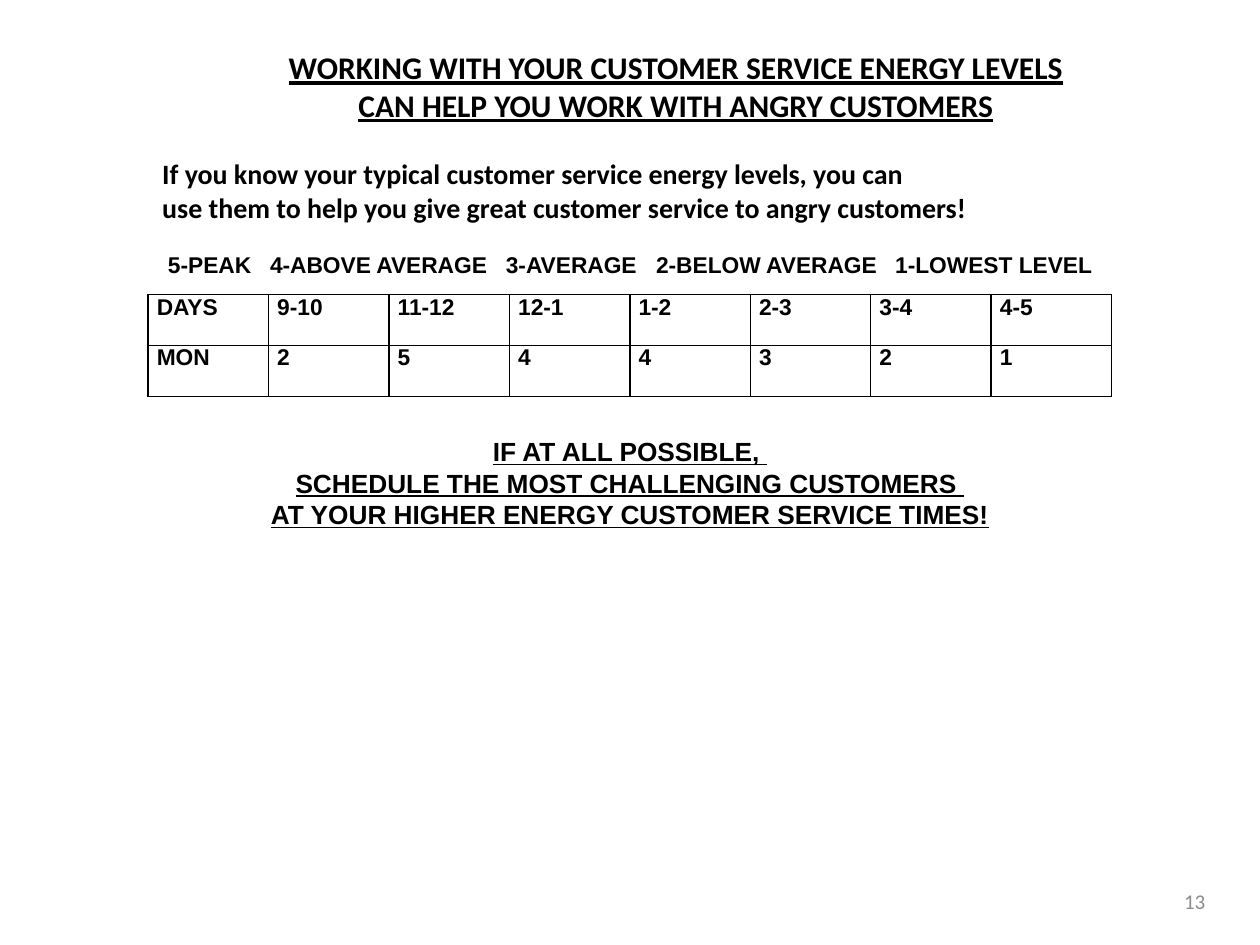
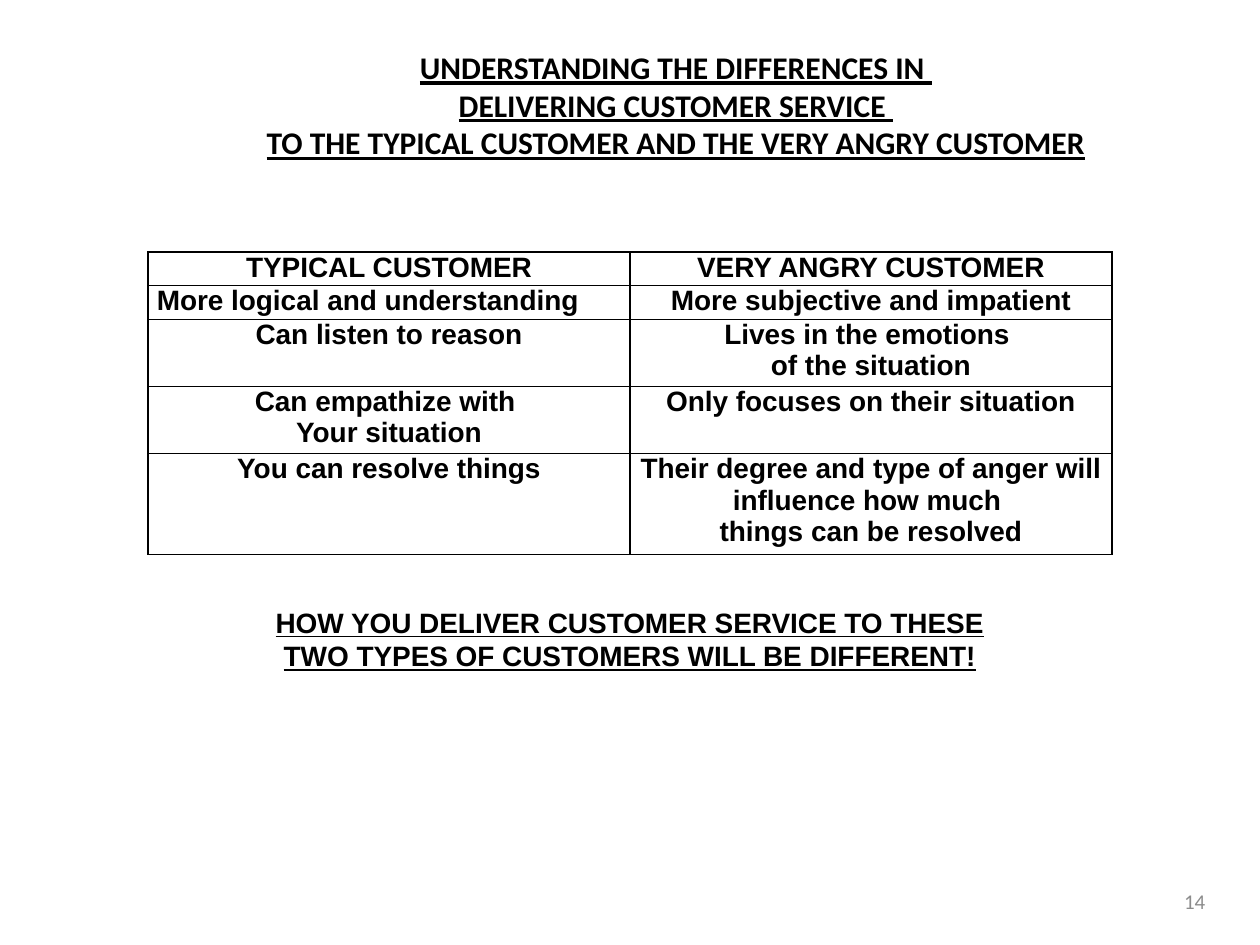
from dataclasses import dataclass
from typing import Optional

from lxml import etree
from pptx import Presentation
from pptx.dml import color
from pptx.enum import text as t
from pptx.oxml import ns
from pptx.util import Pt

COLORS = {"ink": "000000", "page_number": "8C8C8C"}
HEADING_FONT, DETAIL_FONT = "Calibri", "Arial"
LEFT, CENTER, RIGHT = t.PP_ALIGN.LEFT, t.PP_ALIGN.CENTER, t.PP_ALIGN.RIGHT
TITLE_AND_BODY, TITLE_ONLY = 1, 5
GRID_LEFT, GRID_WIDTH = 84.6, 550.8


@dataclass(frozen=True)
class Box:
    left: float
    top: float
    width: float
    height: float


@dataclass(frozen=True)
class Grid:
    top: float
    height: float
    row_height: float
    rows: list[list[str]]
    size: float
    align: t.PP_ALIGN
    left_cells: tuple[tuple[int, int], ...] = ()


@dataclass(frozen=True)
class EnergyLevel:
    label: str
    left: float
    width: float


TITLE_BOX = Box(54, 24, 664.5, 74)
INTRO_BOX = Box(85.5, 85.7, 560, 46)
NUMBER_BOX = Box(528, 500.4, 167.8, 28.8)
LEGEND_TOP, LEGEND_HEIGHT = 143.3, 16
ENERGY_LEVELS = [
    EnergyLevel("5-PEAK", 96, 56),
    EnergyLevel("4-ABOVE AVERAGE", 154.3, 132),
    EnergyLevel("3-AVERAGE", 289.1, 83),
    EnergyLevel("2-BELOW AVERAGE", 374.9, 134),
    EnergyLevel("1-LOWEST LEVEL", 511.6, 124),
]


def write(frame, content: str, *, size: float, font: str = DETAIL_FONT,
          fill: str = "ink", bold: bool = True, underline: bool = False,
          align: t.PP_ALIGN = LEFT, pitch: Optional[float] = None) -> None:
    for index, line in enumerate(content.split("\n")):
        paragraph = frame.paragraphs[0] if index == 0 else frame.add_paragraph()
        properties = paragraph._p.get_or_add_pPr()
        properties.set("marL", "0")
        properties.set("indent", "0")
        paragraph.space_before = Pt(0)
        if pitch:
            paragraph.line_spacing = Pt(pitch)
        etree.SubElement(properties, ns.qn("a:buNone"))
        paragraph.alignment = align
        run = paragraph.add_run()
        run.text = line
        run.font.name = font
        run.font.size = Pt(size)
        run.font.bold = bold
        run.font.underline = underline
        run.font.color.rgb = color.RGBColor.from_string(COLORS[fill])


def fill_placeholder(holder, box: Box, content: str, **style) -> None:
    holder.left, holder.top = Pt(box.left), Pt(box.top)
    holder.width, holder.height = Pt(box.width), Pt(box.height)
    frame = holder.text_frame
    frame.auto_size = t.MSO_AUTO_SIZE.NONE
    frame.vertical_anchor = t.MSO_ANCHOR.TOP
    write(frame, content, font=HEADING_FONT, **style)


def add_text(slide, box: Box, content: str, *, inset: float = 0,
             anchor: t.MSO_ANCHOR = t.MSO_ANCHOR.TOP, wrap: bool = True,
             **style) -> None:
    frame = slide.shapes.add_textbox(
        Pt(box.left), Pt(box.top), Pt(box.width), Pt(box.height)).text_frame
    frame.word_wrap = wrap
    frame.margin_left = frame.margin_right = Pt(inset)
    frame.margin_top = frame.margin_bottom = Pt(0)
    frame.vertical_anchor = anchor
    write(frame, content, **style)


def outline(cell) -> None:
    properties = cell._tc.get_or_add_tcPr()
    for side in ("lnL", "lnR", "lnT", "lnB"):
        line = etree.SubElement(properties, ns.qn(f"a:{side}"), w=str(Pt(1)))
        paint = etree.SubElement(line, ns.qn("a:solidFill"))
        etree.SubElement(paint, ns.qn("a:srgbClr"), val=COLORS["ink"])


def add_grid(slide, grid: Grid) -> None:
    columns = len(grid.rows[0])
    holder = slide.shapes.add_table(
        len(grid.rows), columns, Pt(GRID_LEFT), Pt(grid.top),
        Pt(GRID_WIDTH), Pt(grid.height))
    table = holder.table
    table.first_row = table.horz_banding = False
    for column in table.columns:
        column.width = Pt(GRID_WIDTH / columns)
    for row_index, entries in enumerate(grid.rows):
        table.rows[row_index].height = Pt(grid.row_height)
        for column_index, entry in enumerate(entries):
            cell = table.cell(row_index, column_index)
            cell.margin_left = cell.margin_right = Pt(5)
            cell.margin_top = cell.margin_bottom = Pt(0)
            outline(cell)
            cell.fill.background()
            align = LEFT if (row_index, column_index) in grid.left_cells else grid.align
            write(cell.text_frame, entry, size=grid.size, align=align)
    holder.height = Pt(grid.height)


def start_slide(deck, layout: int, title: str, number: int):
    slide = deck.slides.add_slide(deck.slide_layouts[layout])
    fill_placeholder(slide.shapes.title, TITLE_BOX, title, size=18,
                     underline=True, align=CENTER, pitch=21.5)
    add_text(slide, NUMBER_BOX, str(number), inset=7.2, anchor=t.MSO_ANCHOR.MIDDLE,
             size=12, font=HEADING_FONT, fill="page_number", bold=False, align=RIGHT)
    return slide


def add_takeaway(slide, top: float, content: str, size: float, pitch: float) -> None:
    box = Box(0, top, 720, pitch * len(content.split("\n")))
    add_text(slide, box, content, size=size, underline=True, align=CENTER, pitch=pitch)


def build_energy_levels(deck) -> None:
    slide = start_slide(
        deck, TITLE_AND_BODY,
        "WORKING WITH YOUR CUSTOMER SERVICE ENERGY LEVELS\n"
        "CAN HELP YOU WORK WITH ANGRY CUSTOMERS", 13)
    fill_placeholder(
        slide.placeholders[1], INTRO_BOX,
        "If you know your typical customer service energy levels, you can\n"
        "use them to help you give great customer service to angry customers!",
        size=16, pitch=19.4)
    for level in ENERGY_LEVELS:
        add_text(slide, Box(level.left, LEGEND_TOP, level.width, LEGEND_HEIGHT),
                 level.label, size=13)
    add_grid(slide, Grid(
        top=168.3, height=58.2, row_height=29.1,
        rows=[["DAYS", "9-10", "11-12", "12-1", "1-2", "2-3", "3-4", "4-5"],
              ["MON", "2", "5", "4", "4", "3", "2", "1"]],
        size=13, align=LEFT))
    add_takeaway(slide, 248.8,
                 "IF AT ALL POSSIBLE, \n"
                 "SCHEDULE THE MOST CHALLENGING CUSTOMERS \n"
                 "AT YOUR HIGHER ENERGY CUSTOMER SERVICE TIMES!", size=15, pitch=18)


def build_customer_differences(deck) -> None:
    slide = start_slide(
        deck, TITLE_ONLY,
        "UNDERSTANDING THE DIFFERENCES IN \n"
        "DELIVERING CUSTOMER SERVICE \n"
        "TO THE TYPICAL CUSTOMER AND THE VERY ANGRY CUSTOMER", 14)
    add_grid(slide, Grid(
        top=144, height=172.8, row_height=0,
        rows=[["TYPICAL CUSTOMER", "VERY ANGRY CUSTOMER"],
              ["More logical and understanding", "More subjective and impatient"],
              ["Can listen to reason", "Lives in the emotions \nof the situation"],
              ["Can empathize with \nYour situation", "Only focuses on their situation"],
              ["You can resolve things",
               "Their degree and type of anger will influence how much \n"
               "things can be resolved"]],
        size=16, align=CENTER, left_cells=((1, 0),)))
    add_takeaway(slide, 346.2,
                 "HOW YOU DELIVER CUSTOMER SERVICE TO THESE\n"
                 "TWO TYPES OF CUSTOMERS WILL BE DIFFERENT!", size=16, pitch=19)


def main() -> None:
    deck = Presentation()
    deck.slide_width, deck.slide_height = Pt(720), Pt(540)
    build_energy_levels(deck)
    build_customer_differences(deck)
    deck.save("out.pptx")


if __name__ == "__main__":
    main()
